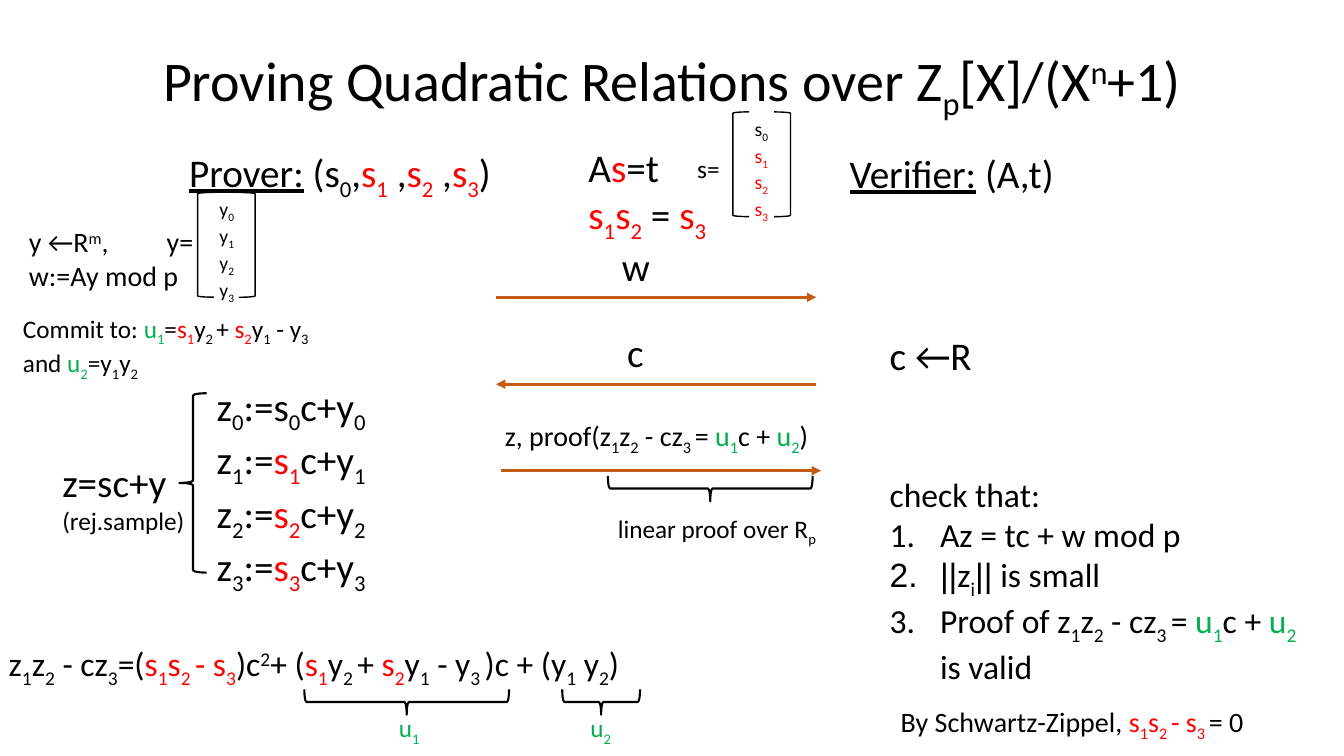
from dataclasses import dataclass
from itertools import groupby
from typing import Any, NamedTuple

from lxml import etree
from pptx import Presentation
from pptx.dml.color import RGBColor
from pptx.enum.shapes import MSO_CONNECTOR, MSO_SHAPE
from pptx.enum.text import MSO_ANCHOR, MSO_AUTO_SIZE, PP_ALIGN
from pptx.oxml.ns import qn
from pptx.util import Cm, Pt

LEFT, CENTER = PP_ALIGN.LEFT, PP_ALIGN.CENTER
TOP, MIDDLE = MSO_ANCHOR.TOP, MSO_ANCHOR.MIDDLE
GROW, FIXED = MSO_AUTO_SIZE.SHAPE_TO_FIT_TEXT, MSO_AUTO_SIZE.NONE
BRACKET, BRACE = MSO_SHAPE.LEFT_BRACKET, MSO_SHAPE.LEFT_BRACE
STRAIGHT = MSO_CONNECTOR.STRAIGHT

BLACK, RED, GREEN, ORANGE = "000000", "FF0000", "00B050", "C55A11"
COLOR_MARKS = {"<": RED, "{": GREEN, ">": BLACK, "}": BLACK}
BASELINE_MARKS = {"_": -25000, "^": 30000}
UNDERLINE_MARK, ARIAL_MARK = "*", "`"
COLUMN_HEIGHT = 2.64


class Style(NamedTuple):
    color: str
    underline: bool
    font: str
    baseline: int


@dataclass
class Text:
    left: float
    top: float
    width: float
    height: float
    size: int
    lines: tuple[str, ...]
    align: Any = LEFT
    anchor: Any = TOP
    auto_size: Any = GROW
    spacing: float = 1.0
    last_size: int = 0
    numbered: bool = False
    tab: float = 0


@dataclass
class Delimiter:
    kind: Any
    left: float
    top: float
    width: float
    height: float
    weight: float
    rotation: int = 0


@dataclass
class Arrow:
    left: float
    top: float
    end: str
    length: float = 8.07


@dataclass
class Column:
    left: float
    top: float
    lines: tuple[str, ...]


TEXTS = [
    Text(0, 0.2, 33.87, 3.68, 40, ("Proving Quadratic Relations over Z_p[X]/(X^n+1)",),
         align=CENTER, anchor=MIDDLE, auto_size=FIXED, spacing=0.9),
    Text(4.52, 3.61, 9.6, 1.45, 28, ("*Prover:* (s_0,<s_1> ,<s_2> ,<s_3>)",)),
    Text(21.16, 3.63, 8.92, 1.45, 28, ("*Verifier:* (A,t)",)),
    Text(14.58, 3.48, 4.17, 2.64, 28, ("A<s>=t", "<s_1s_2> = <s_3>")),
    Text(17.32, 3.73, 1.14, 1.02, 18, ("s=",)),
    Text(0.48, 5.54, 13.16, 1.96, 20, ("y ←R^m,\ty=", "w:=Ay mod p"), tab=3.47),
    Text(15.42, 5.97, 1.24, 1.45, 28, ("w",)),
    Text(14.3, 8.15, 3.43, 1.45, 28, ("c",), align=CENTER),
    Text(22.17, 8.23, 3.4, 1.45, 28, ("c ←R",)),
    Text(0.33, 7.77, 9.47, 1.8, 18,
         ("Commit to: {u_1}=<s_1>y_2_ + <s_2>y_1 - y_3", "and {u_2}=y_1y_2")),
    Text(5.21, 9.5, 4.93, 5.84, 28,
         ("z_0:=s_0c+y_0", *(f"z_{i}:=<s_{i}>c+y_{i}" for i in range(1, 4)))),
    Text(1.32, 11.43, 3.81, 2.24, 28, ("z=sc+y", "(rej.sample)"), last_size=18),
    Text(12.14, 10.41, 8.81, 1.96, 20,
         ("z, proof(z_1z_2 - cz_3_ = {u_1}c + {u_2})",), align=CENTER),
    Text(15.32, 12.8, 5.74, 1.02, 18, ("linear proof over R_p",)),
    Text(22.17, 11.81, 11.3, 5.38, 24,
         ("check that:", "Az = tc + w mod p", "`||`z_i`||` is small",
          "Proof of z_1z_2 - cz_3_ = {u_1}c + {u_2_ }is valid"), numbered=True),
    Text(-0.03, 16.08, 18.97, 1.27, 24,
         ("z_1z_2 - cz_3=(<s_1s_2_ - s_3>)c^2+ (<s_1>y_2_ + <s_2>y_1 - y_3_ )c + (y_1 y_2)",)),
    Text(9.8, 17.83, 1.4, 1.02, 18, ("{u_1}",)),
    Text(14.63, 17.83, 1.4, 1.02, 18, ("{u_2}",)),
    Text(22.45, 17.63, 11.02, 1.12, 20, ("By Schwartz-Zippel, <s_1s_2_ - s_3_ >= 0",)),
]
COLUMNS = [
    Column(4.98, 4.85, tuple(f"y_{i}" for i in range(4))),
    Column(18.47, 2.82, ("s_0", *(f"<s_{i}>" for i in range(1, 4)))),
]
BRACES = [
    Delimiter(BRACE, 4.52, 9.91, 0.69, 4.52, 1.5),
    Delimiter(BRACE, 17.58, 9.73, 0.64, 5.16, 1.5, 270),
    Delimiter(BRACE, 9.93, 15.11, 0.64, 5.16, 1.5, 270),
    Delimiter(BRACE, 14.83, 16.71, 0.64, 1.96, 1.5, 270),
]
ARROWS = [
    Arrow(12.5, 7.49, "a:tailEnd"),
    Arrow(12.5, 9.68, "a:headEnd"),
    Arrow(12.62, 11.86, "a:tailEnd"),
]


def set_values(target: Any, values: dict[str, Any]) -> None:
    for name, value in values.items():
        setattr(target, name, value)


def paint(color: Any, hex_value: str) -> None:
    color.rgb = RGBColor.from_string(hex_value)


def styled_characters(markup: str) -> list[tuple[Style, str]]:
    style = Style(BLACK, False, "Calibri", 0)
    characters = []
    for mark in markup:
        if mark in COLOR_MARKS:
            style = style._replace(color=COLOR_MARKS[mark])
        elif mark in BASELINE_MARKS:
            style = style._replace(baseline=BASELINE_MARKS[mark])
        elif mark == UNDERLINE_MARK:
            style = style._replace(underline=not style.underline)
        elif mark == ARIAL_MARK:
            style = style._replace(font="Calibri" if style.font == "Arial" else "Arial")
        else:
            characters.append((style, mark))
            style = style._replace(baseline=0)
    return characters


def write_runs(paragraph: Any, markup: str, size: int) -> None:
    for style, group in groupby(styled_characters(markup), key=lambda item: item[0]):
        run = paragraph.add_run()
        run.text = "".join(character for _, character in group)
        set_values(run.font, {"name": style.font, "size": Pt(size), "underline": style.underline})
        paint(run.font.color, style.color)
        if style.baseline:
            run._r.get_or_add_rPr().set("baseline", str(style.baseline))


def draw_text(slide: Any, text: Text) -> None:
    box = slide.shapes.add_textbox(Cm(text.left), Cm(text.top), Cm(text.width), Cm(text.height))
    frame = box.text_frame
    set_values(frame, {"word_wrap": True, "auto_size": text.auto_size,
                       "vertical_anchor": text.anchor})
    for index, line in enumerate(text.lines):
        paragraph = frame.add_paragraph() if index else frame.paragraphs[0]
        set_values(paragraph, {"alignment": text.align, "line_spacing": text.spacing})
        properties = paragraph._p.get_or_add_pPr()
        if text.numbered and index:
            properties.set("marL", str(Cm(1.27)))
            properties.set("indent", str(-Cm(1.27)))
            etree.SubElement(properties, qn("a:buFont"), typeface="+mj-lt")
            etree.SubElement(properties, qn("a:buAutoNum"), type="arabicPeriod")
        if text.tab and "\t" in line:
            tabs = etree.SubElement(properties, qn("a:tabLst"))
            etree.SubElement(tabs, qn("a:tab"), pos=str(Cm(text.tab)), algn="l")
        is_last = index == len(text.lines) - 1
        write_runs(paragraph, line, text.last_size if is_last and text.last_size else text.size)


def draw_delimiter(slide: Any, item: Delimiter) -> None:
    shape = slide.shapes.add_shape(item.kind, Cm(item.left), Cm(item.top),
                                   Cm(item.width), Cm(item.height))
    shape.rotation = item.rotation
    shape.shadow.inherit = False
    shape.fill.background()
    shape.line.width = Pt(item.weight)
    paint(shape.line.color, BLACK)


def draw_column(slide: Any, column: Column) -> None:
    for offset, rotation in ((0, 0), (1.04, 180)):
        draw_delimiter(slide, Delimiter(BRACKET, column.left + offset, column.top,
                                        0.41, COLUMN_HEIGHT, 1, rotation))
    draw_text(slide, Text(column.left + 0.3, column.top, 1.14, COLUMN_HEIGHT, 14, column.lines))


def draw_arrow(slide: Any, arrow: Arrow) -> None:
    connector = slide.shapes.add_connector(STRAIGHT, Cm(arrow.left), Cm(arrow.top),
                                           Cm(arrow.left + arrow.length), Cm(arrow.top))
    connector.line.width = Pt(2.25)
    paint(connector.line.color, ORANGE)
    etree.SubElement(connector.line._get_or_add_ln(), qn(arrow.end), type="triangle")
    etree.SubElement(connector._element.spPr, qn("a:effectLst"))


def main() -> None:
    presentation = Presentation()
    set_values(presentation, {"slide_width": Cm(33.87), "slide_height": Cm(19.05)})
    slide = presentation.slides.add_slide(presentation.slide_layouts[6])
    for items, draw in ((ARROWS, draw_arrow), (TEXTS, draw_text),
                        (COLUMNS, draw_column), (BRACES, draw_delimiter)):
        for item in items:
            draw(slide, item)
    presentation.save("out.pptx")


if __name__ == "__main__":
    main()
